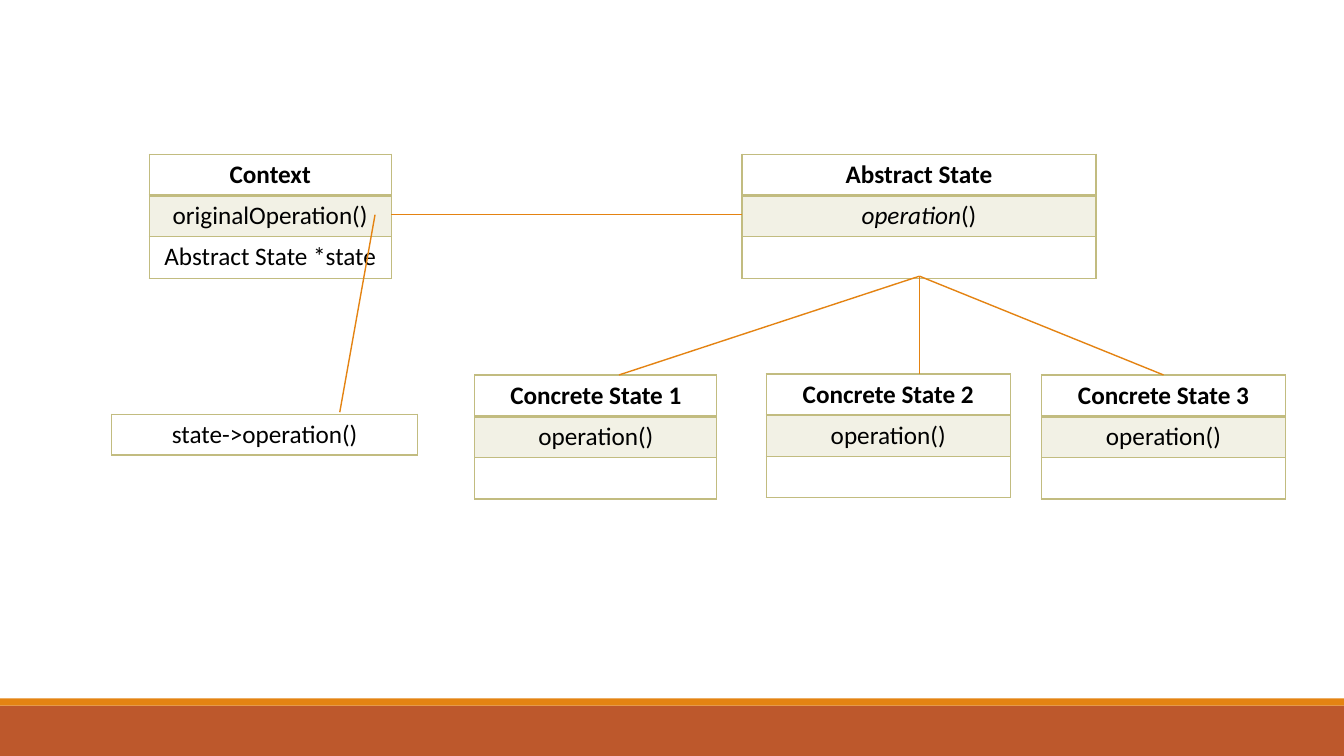
"""Build a class diagram of the State design pattern."""
from dataclasses import dataclass

from lxml import etree
from pptx import Presentation
from pptx import util as u
from pptx.dml.color import RGBColor
from pptx.enum import shapes, text
from pptx.oxml.ns import qn


@dataclass(frozen=True)
class Theme:
    font: str = "Calibri"
    size: int = 18
    ink: str = "000000"
    border: str = "C2BC80"
    accent: str = "E48312"
    footer: str = "BD582C"
    band_alpha: int = 20000
    thin: float = 1
    thick: float = 2


class Diagram:
    def __init__(self, slide, theme):
        self.slide = slide
        self.theme = theme

    def bar(self, top, height, color):
        shape = self.slide.shapes.add_shape(
            shapes.MSO_SHAPE.RECTANGLE, 0, u.Inches(top), u.Inches(13.33), u.Inches(height))
        shape.shadow.inherit = False
        shape.fill.solid()
        shape.fill.fore_color.rgb = RGBColor.from_string(color)
        shape.line.fill.background()

    def line(self, start, end):
        points = [u.Inches(value) for value in (*start, *end)]
        connector = self.slide.shapes.add_connector(shapes.MSO_CONNECTOR.STRAIGHT, *points)
        connector.line.color.rgb = RGBColor.from_string(self.theme.accent)
        connector.line.width = u.Pt(self.theme.thin)
        etree.SubElement(connector._element.spPr, qn("a:effectLst"))

    def border(self, cell, side, width):
        properties = cell._tc.get_or_add_tcPr()
        line = etree.SubElement(properties, qn(f"a:ln{side}"), w=str(u.Pt(width)))
        fill = etree.SubElement(line, qn("a:solidFill"))
        etree.SubElement(fill, qn("a:srgbClr"), val=self.theme.border)

    def band(self, cell):
        cell.fill.solid()
        cell.fill.fore_color.rgb = RGBColor.from_string(self.theme.border)
        color = cell._tc.tcPr.find(f"{qn('a:solidFill')}/{qn('a:srgbClr')}")
        etree.SubElement(color, qn("a:alpha"), val=str(self.theme.band_alpha))

    def label(self, cell, content, bold):
        paragraph = cell.text_frame.paragraphs[0]
        paragraph.alignment = text.PP_ALIGN.CENTER
        paragraph.font.name = self.theme.font
        paragraph.font.size = u.Pt(self.theme.size)
        paragraph.font.bold = bold
        paragraph.font.color.rgb = RGBColor.from_string(self.theme.ink)
        italic, bar, plain = content.rpartition("|")
        for part in filter(None, (italic, plain)):
            run = paragraph.add_run()
            run.text = part
            if bar:
                run.font.italic = part == italic

    def box(self, left, top, width, rows, row_height=0.41):
        """Draw a class box; text before a bar in a row is italic."""
        frame = self.slide.shapes.add_table(
            len(rows), 1, u.Inches(left), u.Inches(top),
            u.Inches(width), u.Inches(row_height * len(rows)))
        table = frame.table
        table.first_row = table.horz_banding = False
        for index, content in enumerate(rows):
            cell = table.cell(index, 0)
            self.label(cell, content, bold=index == 0 and len(rows) > 1)
            widths = {"L": self.theme.thin, "R": self.theme.thin,
                      "T": self.theme.thick if index == 1 else self.theme.thin,
                      "B": self.theme.thick if index == 0 else self.theme.thin}
            for side, line_width in widths.items():
                self.border(cell, side, line_width)
            if index == 1:
                self.band(cell)
            else:
                cell.fill.background()


def main():
    presentation = Presentation()
    presentation.slide_width = u.Inches(13.33)
    presentation.slide_height = u.Inches(7.5)
    theme = Theme()
    diagram = Diagram(presentation.slides.add_slide(presentation.slide_layouts[6]), theme)

    diagram.bar(7, 0.5, theme.footer)
    diagram.bar(6.93, 0.07, theme.accent)

    diagram.box(7.36, 1.53, 3.51, ["Abstract State", "operation|()", ""])
    state_bottom = (9.12, 2.74)
    concrete_states = [(4.71, 3.72, 2.4, 6.14), (7.6, 3.71, 2.42, 9.12), (10.33, 3.72, 2.42, 11.54)]
    for number, (left, top, width, joint) in enumerate(concrete_states, 1):
        diagram.box(left, top, width, [f"Concrete State {number}", "operation()", ""])
        diagram.line(state_bottom, (joint, top))

    diagram.box(1.48, 1.53, 2.4, ["Context", "originalOperation()", "Abstract State *state"])
    diagram.line((3.72, 2.13), (3.37, 4.09))
    diagram.box(1.11, 4.11, 3.03, ["state->operation()"], 0.4)
    diagram.line((3.88, 2.13), (7.36, 2.13))

    presentation.save("out.pptx")


if __name__ == "__main__":
    main()
